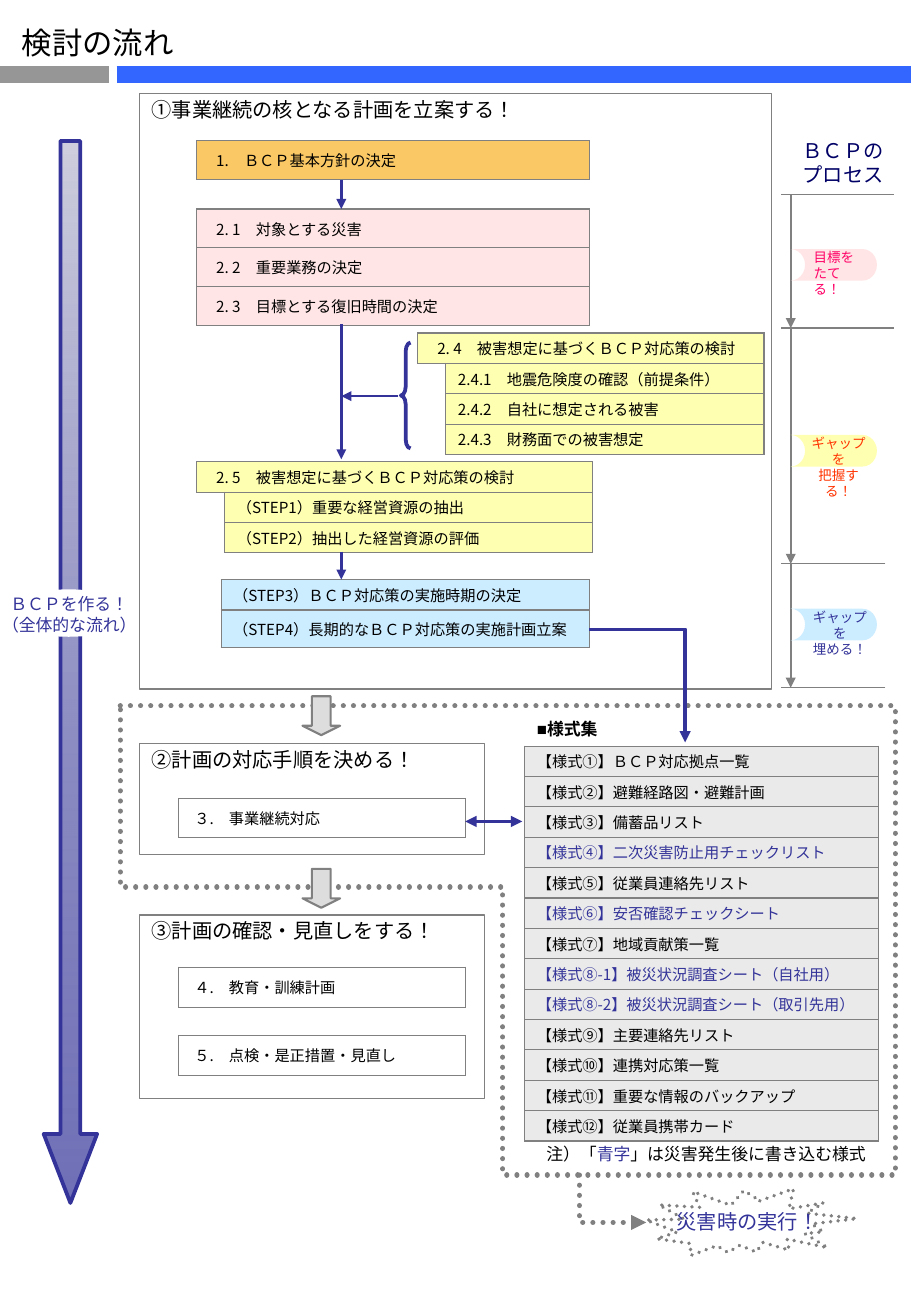
from itertools import pairwise

from lxml.etree import SubElement
from pptx import Presentation
from pptx.dml.color import RGBColor
from pptx.enum.dml import MSO_LINE
from pptx.enum.lang import MSO_LANGUAGE_ID
from pptx.enum.shapes import MSO_CONNECTOR, MSO_SHAPE
from pptx.enum.text import MSO_ANCHOR, MSO_AUTO_SIZE, PP_ALIGN
from pptx.oxml.ns import qn
from pptx.util import Inches, Pt

GOTHIC, ARIAL = "Noto Sans CJK JP", "Arial"
GRAY, NAVY, BLACK, WHITE = "808080", "333399", "000000", "FFFFFF"
PINK, YELLOW, SKY = "FFE5E5", "FFFFB2", "CCECFF"
ROW = 0.25

STAGES = [  # heading, top, width, height
    ("①事業継続の核となる計画を立案する！", 0.77, 5.2, 4.9),
    ("②計画の対応手順を決める！", 6.12, 2.84, 0.91),
    ("③計画の確認・見直しをする！", 7.53, 2.84, 1.51),
]
STEPS = [  # left, top, width, row heights, fill, margin, indent, rows
    (1.62, 1.16, 3.23, [0.32], "FAC864", 0.16, 0, ["1.　ＢＣＰ基本方針の決定"]),
    (1.62, 1.72, 3.23, [0.32] * 3, PINK, 0.16, 0,
     ["2. 1　対象とする災害", "2. 2　重要業務の決定", "2. 3　目標とする復旧時間の決定"]),
    (3.44, 2.74, 2.85, [ROW] * 4, YELLOW, 0.16, 0.23,
     ["2. 4　被害想定に基づくＢＣＰ対応策の検討", "2.4.1　地震危険度の確認（前提条件）",
      "2.4.2　自社に想定される被害", "2.4.3　財務面での被害想定"]),
    (1.62, 3.8, 3.26, [ROW] * 3, YELLOW, 0.16, 0.23,
     ["2. 5　被害想定に基づくＢＣＰ対応策の検討", "（STEP1）重要な経営資源の抽出",
      "（STEP2）抽出した経営資源の評価"]),
    (1.82, 4.77, 3.03, [ROW, 0.31], SKY, 0.1, 0,
     ["（STEP3）ＢＣＰ対応策の実施時期の決定", "（STEP4）長期的なＢＣＰ対応策の実施計画立案"]),
    (1.47, 6.57, 2.36, [0.32], WHITE, 0.13, 0, ["３.　事業継続対応"]),
    (1.47, 7.96, 2.36, [0.33], WHITE, 0.13, 0, ["４.　教育・訓練計画"]),
    (1.47, 8.52, 2.36, [0.33], WHITE, 0.13, 0, ["５.　点検・是正措置・見直し"]),
]
FORMS_TITLE = "■様式集"
FORMS = [  # text, filled in after a disaster
    ("【様式①】ＢＣＰ対応拠点一覧", False), ("【様式②】避難経路図・避難計画", False),
    ("【様式③】備蓄品リスト", False), ("【様式④】二次災害防止用チェックリスト", True),
    ("【様式⑤】従業員連絡先リスト", False), ("【様式⑥】安否確認チェックシート", True),
    ("【様式⑦】地域貢献策一覧", False), ("【様式⑧-1】被災状況調査シート（自社用）", True),
    ("【様式⑧-2】被災状況調査シート（取引先用）", True), ("【様式⑨】主要連絡先リスト", False),
    ("【様式⑩】連携対応策一覧", False), ("【様式⑪】重要な情報のバックアップ", False),
    ("【様式⑫】従業員携帯カード", False),
]
NOTE = [("注）「", BLACK), ("青字", NAVY), ("」は災害発生後に書き込む様式", BLACK)]
PHASES = [  # text, tag top, text left, text width, tag fill, text colour, alignment
    ("目標を\nたてる！", 2.05, 6.6, 0.64, PINK, "FF0066", PP_ALIGN.LEFT),
    ("ギャップを\n把握する！", 3.58, 6.53, 0.75, YELLOW, "FF3300", PP_ALIGN.CENTER),
    ("ギャップを\n埋める！", 5.01, 6.54, 0.75, SKY, NAVY, PP_ALIGN.CENTER),
]
PHASE_LIMITS = [(1.6, 7.36), (2.7, 7.36), (4.64, 7.29), (5.66, 7.29)]  # y, right end
FLOW_ARROWS = [((2.81, 1.48), (2.81, 1.72)), ((2.81, 2.67), (2.81, 3.78)),
               ((2.81, 4.54), (2.81, 4.77)), ((3.28, 3.26), (2.81, 3.26))]
FORMS_FRAME = [(0.99, 5.81), (7.37, 5.81), (7.37, 9.67), (4.14, 9.67), (4.14, 7.3), (0.99, 7.3)]

prs = Presentation()
prs.slide_width, prs.slide_height = Inches(7.5), Inches(10.83)
slide = prs.slides.add_slide(prs.slide_layouts[6])
shapes = slide.shapes


def rgb(value):
    return RGBColor.from_string(value)


def style_run(run, size, color, font, bold=False):
    run.font.size, run.font.bold = Pt(size), bold
    run.font.color.rgb = rgb(color)
    run.font.name = font
    run.font.language_id = MSO_LANGUAGE_ID.JAPANESE
    SubElement(run.font._element, qn("a:ea"), typeface=font)


def write(frame, text, size, color=BLACK, font=GOTHIC, align=PP_ALIGN.LEFT, bold=False):
    frame.text = text
    for paragraph in frame.paragraphs:
        paragraph.alignment = align
        for run in paragraph.runs:
            style_run(run, size, color, font, bold)


def style_line(line, color, width, dotted=False, head=False, tail=False):
    line.color.rgb, line.width = rgb(color), Pt(width)
    ln = line._get_or_add_ln()
    if dotted:
        line.dash_style = MSO_LINE.ROUND_DOT
        ln.set("cap", "rnd")
    for tag, wanted in (("a:headEnd", head), ("a:tailEnd", tail)):
        if wanted:
            SubElement(ln, qn(tag), type="triangle")


def add_line(start, end, color, width, **ends):
    line = shapes.add_connector(MSO_CONNECTOR.STRAIGHT, *map(Inches, start + end))
    style_line(line.line, color, width, **ends)
    SubElement(line._element.spPr, qn("a:effectLst"))


def add_box(kind, left, top, width, height, fill, line=None, weight=0.75, dotted=False):
    box = shapes.add_shape(kind, *map(Inches, (left, top, width, height)))
    box.shadow.inherit = False
    box.fill.solid()
    box.fill.fore_color.rgb = rgb(fill)
    if line:
        style_line(box.line, line, weight, dotted)
    else:
        box.line.fill.background()
    return box


def add_outline(points, color, width, fill=None, dotted=False, tail=False):
    """Draw a closed, filled outline, or an open path when there is no fill."""
    corners = [tuple(map(Inches, point)) for point in points]
    builder = shapes.build_freeform(*corners[0], scale=1.0)
    builder.add_line_segments(corners[1:], close=bool(fill))
    outline = builder.convert_to_shape()
    outline.shadow.inherit = False
    if fill:
        outline.fill.solid()
        outline.fill.fore_color.rgb = rgb(fill)
    else:
        outline.fill.background()
    style_line(outline.line, color, width, dotted, tail=tail)


def add_text(left, top, width, height, text, size, color, wrap=True, **look):
    frame = shapes.add_textbox(*map(Inches, (left, top, width, height))).text_frame
    frame.word_wrap, frame.auto_size = wrap, MSO_AUTO_SIZE.SHAPE_TO_FIT_TEXT
    write(frame, text, size, color, **look)
    return frame


def style_cell(cell, fill, sides, margin=0.1):
    """Fill a cell and draw the sides named by L, R, T and B."""
    cell.vertical_anchor = MSO_ANCHOR.MIDDLE
    cell.margin_left, cell.margin_right = Inches(margin), Inches(0.05)
    cell.margin_top = cell.margin_bottom = Inches(0.03)
    cell.text_frame.paragraphs[0]._p.get_or_add_endParaRPr().set("sz", "900")
    properties = cell._tc.get_or_add_tcPr()
    for side in "LRTB":
        border = SubElement(properties, qn("a:ln" + side), w=str(Pt(0.75)))
        if side in sides:
            SubElement(SubElement(border, qn("a:solidFill")), qn("a:srgbClr"), val=GRAY)
        else:
            SubElement(border, qn("a:noFill"))
    if fill:
        cell.fill.solid()
        cell.fill.fore_color.rgb = rgb(fill)
    else:
        cell.fill.background()


def add_steps(left, top, width, heights, fill, margin, indent, rows):
    """Stack rows in a table; an indent sets the rows below the first one back."""
    widths = [indent, width - indent] if indent else [width]
    table = shapes.add_table(len(rows), len(widths), *map(Inches, (left, top, width, sum(heights)))).table
    table.first_row = table.horz_banding = False
    for column, size in zip(table.columns, widths):
        column.width = Inches(size)
    if indent:
        table.cell(0, 0).merge(table.cell(0, 1))
    for i, (text, height) in enumerate(zip(rows, heights)):
        table.rows[i].height = Inches(height)
        set_back = bool(indent and i)
        write(table.cell(i, int(set_back)).text_frame, text, 9)
        for j in range(len(widths)):
            blank = set_back and j == 0
            sides = ("TR" if i == 1 else "R") if blank else "LRTB"
            style_cell(table.cell(i, j), None if blank else fill, sides, 0.1 if set_back else margin)


def add_forms(left, top, width):
    table = shapes.add_table(len(FORMS) + 1, 1, *map(Inches, (left, top, width, 0.27 + ROW * len(FORMS)))).table
    table.first_row = table.horz_banding = False
    for i, (text, after_disaster) in enumerate([(FORMS_TITLE, False)] + FORMS):
        cell = table.cell(i, 0)
        table.rows[i].height = Inches(ROW if i else 0.27)
        look = (9, NAVY if after_disaster else BLACK, GOTHIC) if i else (10, BLACK, ARIAL)
        write(cell.text_frame, text, *look, bold=i == 0)
        style_cell(cell, "EAEAEA" if i else WHITE, "LRTB" if i else "B")


add_line((0, 0.61), (0.9, 0.61), "969696", 10)
add_line((0.96, 0.61), (7.5, 0.61), "3366FF", 10)
add_text(0.08, 0.15, 1.45, 0.4, "検討の流れ", 18, BLACK, wrap=False, font=ARIAL)
add_box(MSO_SHAPE.EXPLOSION2, 5.32, 9.75, 1.73, 0.63, WHITE, GRAY, 2.25, dotted=True).rotation = 5.6
add_outline(FORMS_FRAME, GRAY, 3, fill=WHITE, dotted=True)

for heading, top, width, height in STAGES:
    stage = add_box(MSO_SHAPE.RECTANGLE, 1.15, top, width, height, WHITE, GRAY)
    stage.text_frame.vertical_anchor = MSO_ANCHOR.TOP
    stage.text_frame.margin_top = Inches(0.03)
    write(stage.text_frame, heading, 12)
for step in STEPS:
    add_steps(*step)
add_forms(4.32, 5.87, 2.91)
note = add_text(4.4, 9.36, 2.84, 0.27, "", 10, BLACK, wrap=False)
for part, color in NOTE:
    run = note.paragraphs[0].add_run()
    run.text = part
    style_run(run, 10, color, ARIAL)

brace = add_box(MSO_SHAPE.LEFT_BRACE, 3.3, 2.82, 0.08, 0.87, WHITE, NAVY, 2.25)
brace.adjustments[0] = 0.9
for top in (5.73, 7.15):
    add_box(MSO_SHAPE.DOWN_ARROW, 2.49, top, 0.31, 0.32, "DDDDDD", GRAY, 1.25).adjustments[1] = 0.25
for start, end in FLOW_ARROWS:
    add_line(start, end, NAVY, 1.5, tail=True)

process = add_text(6.51, 1.09, 0.94, 0.5, "ＢＣＰの\nプロセス", 12, "000066")
for paragraph in process.paragraphs:
    latin = paragraph.runs[0].font._element.find(qn("a:latin"))
    effects = SubElement(latin.getparent(), qn("a:effectLst"))
    shadow = SubElement(effects, qn("a:outerShdw"), dist=str(Pt(1.5)), dir="2700000")
    SubElement(shadow, qn("a:srgbClr"), val="C0C0C0")
    latin.addprevious(effects)
for y, right in PHASE_LIMITS:
    add_line((right, y), (6.43, y), GRAY, 0.75)
for (start, _), (end, _) in pairwise(PHASE_LIMITS):
    add_line((6.51, start), (6.51, end), GRAY, 1, tail=True)
for text, top, left, width, fill, color, align in PHASES:
    tag = add_box(MSO_SHAPE.FLOWCHART_STORED_DATA, 6.51, top, 0.71, 0.26, fill)
    tag._element.spPr.find(qn("a:xfrm")).set("flipH", "1")
    add_text(left, top - 0.05, width, 0.37, text, 8, color, font=ARIAL, align=align)

overall = add_box(MSO_SHAPE.DOWN_ARROW, 0.36, 1.16, 0.44, 8.74, WHITE, NAVY, 2.25)
overall.adjustments[0], overall.adjustments[1] = 0.37, 1.29
overall.fill.gradient()
overall.fill.gradient_angle = 270
for stop, color in zip(overall.fill.gradient_stops, ("CECEDE", NAVY)):
    stop.color.rgb = rgb(color)
faded = overall._element.spPr.findall(".//" + qn("a:gs"))[-1]
SubElement(faded.find(qn("a:srgbClr")), qn("a:alpha"), val="70000")
add_box(MSO_SHAPE.OVAL, 0.03, 4.85, 1.07, 0.39, WHITE)
add_text(-0.1, 4.84, 1.34, 0.43, "ＢＣＰを作る！\n（全体的な流れ）", 10, NAVY, align=PP_ALIGN.CENTER)

add_outline([(4.85, 5.18), (5.64, 5.18), (5.64, 6.11)], NAVY, 2.25, tail=True)
add_outline([(4.77, 9.67), (4.77, 10.06), (5.32, 10.06)], GRAY, 3, dotted=True, tail=True)
add_line((3.83, 6.76), (4.3, 6.76), NAVY, 2.25, head=True, tail=True)
add_text(5.33, 9.9, 1.65, 0.3, "災害時の実行！", 12, NAVY, align=PP_ALIGN.CENTER)

prs.save("out.pptx")
